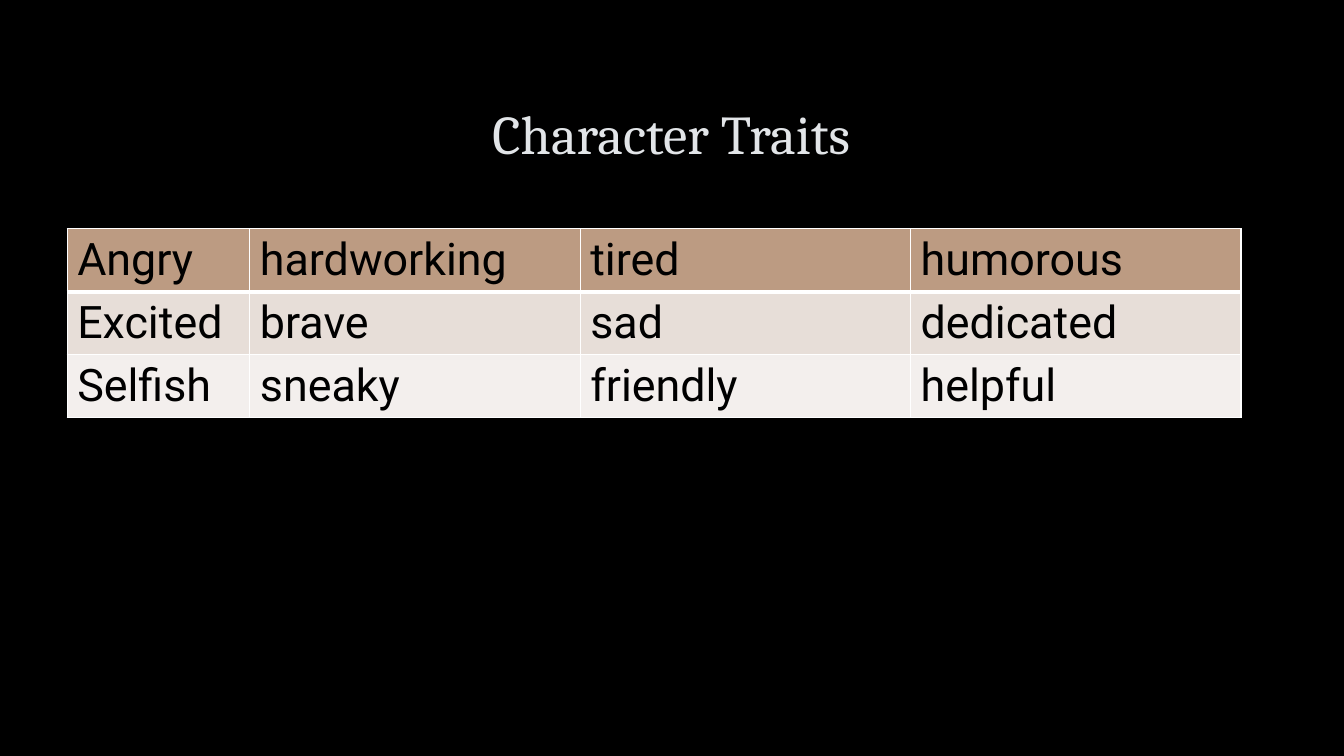
from lxml import etree
from pptx import Presentation
from pptx.dml.color import RGBColor
from pptx.enum import text
from pptx.oxml import parse_xml
from pptx.oxml.ns import nsdecls
from pptx.util import Pt

BLACK = RGBColor(0x00, 0x00, 0x00)
WHITE = RGBColor(0xFF, 0xFF, 0xFF)
SILVER = RGBColor(0xE2, 0xE5, 0xE8)
CHARCOAL = RGBColor(0x40, 0x40, 0x40)
TAN = RGBColor(0xBC, 0x9B, 0x82)
BEIGE = RGBColor(0xE7, 0xDE, 0xD8)
CREAM = RGBColor(0xF3, 0xEF, 0xED)

TRAITS = [
    (TAN, ["Angry", "hardworking", "tired", "humorous"]),
    (BEIGE, ["Excited", "brave", "sad", "dedicated"]),
    (CREAM, ["Selfish", "sneaky", "friendly", "helpful"]),
]
COLUMN_WIDTHS = [130.5, 236, 236, 236]
ROW_HEIGHT = 45


def line_xml(tag, width, color, alpha=100):
    return parse_xml(
        f'<a:{tag} {nsdecls("a")} w="{Pt(width)}"><a:solidFill><a:srgbClr val="{color}">'
        f'<a:alpha val="{alpha * 1000}"/></a:srgbClr></a:solidFill>'
        f'<a:prstDash val="solid"/></a:{tag}>')


def add_span(para, words, font_name, size, color):
    span = para.add_run()
    span.text = words
    span.font.name = font_name
    span.font.size = Pt(size)
    span.font.bold = False
    span.font.color.rgb = color
    return span


deck = Presentation()
deck.slide_width, deck.slide_height = Pt(960), Pt(540)
page = deck.slides.add_slide(deck.slide_layouts[5])
page.background.fill.solid()
page.background.fill.fore_color.rgb = BLACK

# Title
title = page.shapes.title
title.left, title.top, title.width, title.height = Pt(72), Pt(48), Pt(815), Pt(99.5)
title.text_frame.vertical_anchor = text.MSO_ANCHOR.MIDDLE
title.text_frame.auto_size = text.MSO_AUTO_SIZE.NONE
para = title.text_frame.paragraphs[0]
para.alignment = text.PP_ALIGN.CENTER
para.line_spacing = 0.9
span = add_span(para, "Character Traits", "Cambria", 39, SILVER)
span.font.element if hasattr(span.font, "element") else None
span._r.get_or_add_rPr().insert(0, line_xml("ln", 0.75, CHARCOAL, 10))

# Table of traits
table = page.shapes.add_table(
    len(TRAITS), len(COLUMN_WIDTHS), Pt(48), Pt(163.5),
    Pt(sum(COLUMN_WIDTHS)), Pt(ROW_HEIGHT * len(TRAITS))).table
for column, width in zip(table.columns, COLUMN_WIDTHS):
    column.width = Pt(width)
for row_index, (fill_color, words) in enumerate(TRAITS):
    table.rows[row_index].height = Pt(ROW_HEIGHT)
    for column_index, word in enumerate(words):
        cell = table.cell(row_index, column_index)
        properties = cell._tc.get_or_add_tcPr()
        for side in ("lnL", "lnR", "lnT", "lnB"):
            below_header = (row_index, side) in [(0, "lnB"), (1, "lnT")]
            properties.append(line_xml(side, 3 if below_header else 1, WHITE))
        cell.fill.solid()
        cell.fill.fore_color.rgb = fill_color
        add_span(cell.text_frame.paragraphs[0], word, "Roboto", 32, BLACK)

deck.save("out.pptx")
